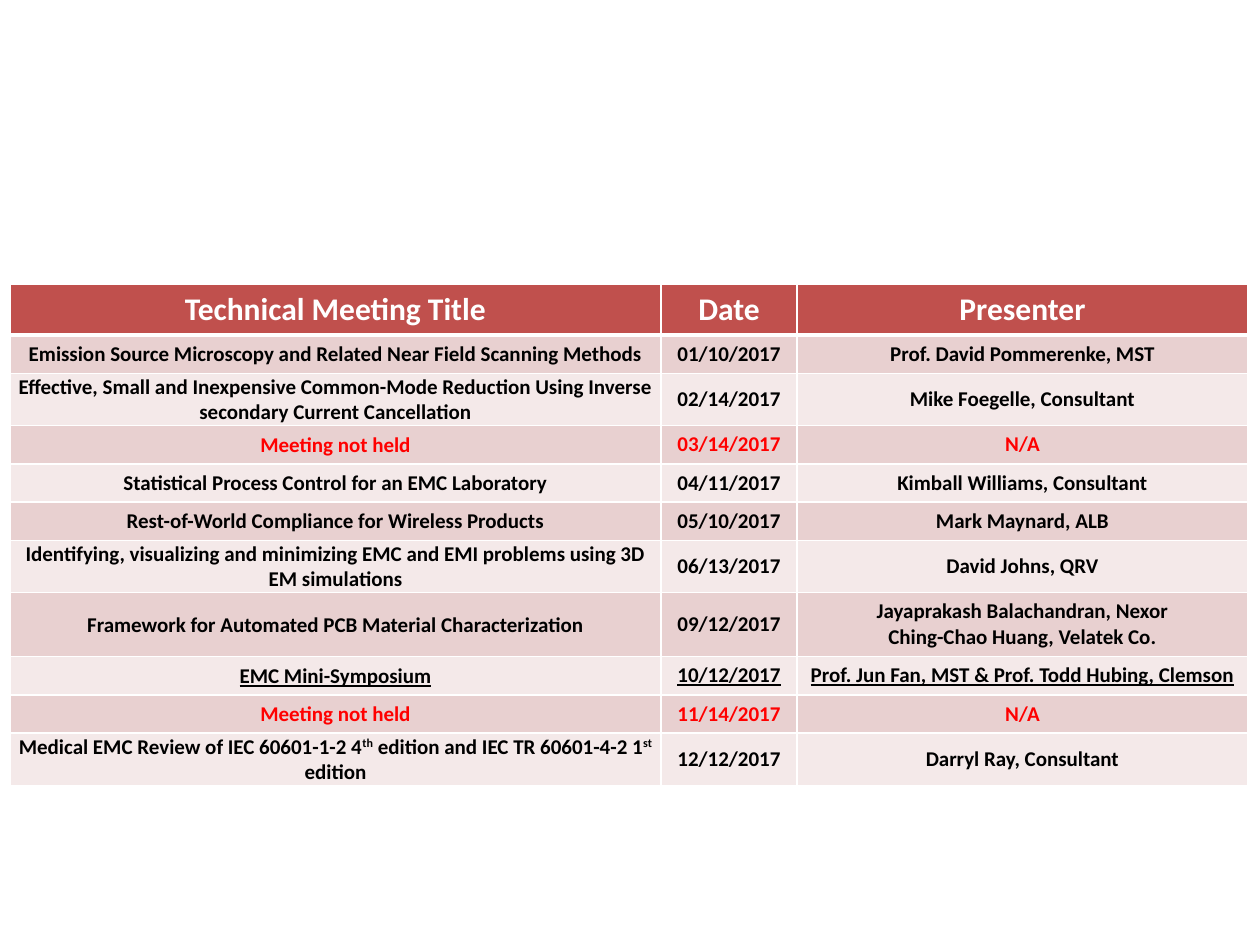
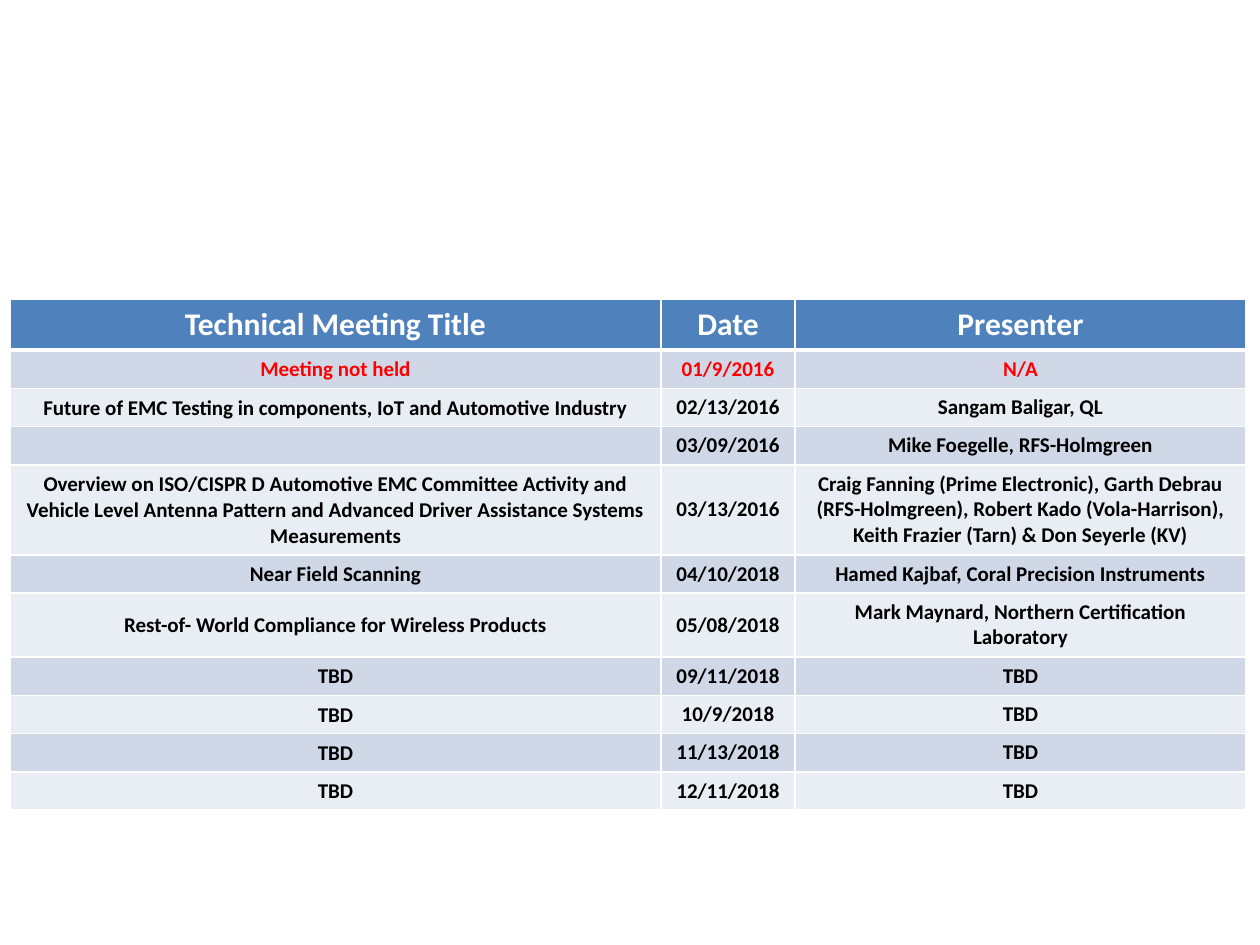
"""Build two slides of technical meeting schedules, one table for each year."""
from dataclasses import dataclass

from lxml import etree
from pptx import Presentation
from pptx import util as u
from pptx.dml.color import RGBColor
from pptx.enum import text
from pptx.oxml.ns import qn

PX = 914400 / 126
FONT = "Calibri"
WHITE, BLACK, RED = "FFFFFF", "000000", "FF0000"
HEADINGS = ("Technical Meeting Title", "Date", "Presenter")
NOT_HELD = "Meeting not held"
HEADER_H, ROW_H, TWO_LINE_TITLE_H, TWO_LINE_H, THREE_LINE_H = 51, 38, 52, 64, 90


@dataclass(frozen=True)
class Meeting:
    title: str
    date: str
    presenter: str = "TBD"
    height: int = ROW_H
    underline: bool = False


@dataclass(frozen=True)
class Schedule:
    top: int
    widths: tuple[int, int, int]
    header: str
    bands: tuple[str, str]
    meetings: tuple[Meeting, ...]


SCHEDULES = (
    Schedule(284, (651, 136, 451), "C0504D", ("E8D0D0", "F4E9E9"), (
        Meeting("Emission Source Microscopy and Related Near Field Scanning Methods",
                "01/10/2017", "Prof. David Pommerenke, MST"),
        Meeting("Effective, Small and Inexpensive Common-Mode Reduction Using Inverse "
                "secondary Current Cancellation",
                "02/14/2017", "Mike Foegelle, Consultant", TWO_LINE_TITLE_H),
        Meeting(NOT_HELD, "03/14/2017", "N/A"),
        Meeting("Statistical Process Control for an EMC Laboratory",
                "04/11/2017", "Kimball Williams, Consultant"),
        Meeting("Rest-of-World Compliance for Wireless Products",
                "05/10/2017", "Mark Maynard, ALB"),
        Meeting("Identifying, visualizing and minimizing EMC and EMI problems using 3D "
                "EM simulations",
                "06/13/2017", "David Johns, QRV", TWO_LINE_TITLE_H),
        Meeting("Framework for Automated PCB Material Characterization", "09/12/2017",
                "Jayaprakash Balachandran, Nexor\nChing-Chao Huang, Velatek Co.",
                TWO_LINE_H),
        Meeting("EMC Mini-Symposium", "10/12/2017",
                "Prof. Jun Fan, MST & Prof. Todd Hubing, Clemson", underline=True),
        Meeting(NOT_HELD, "11/14/2017", "N/A"),
        Meeting("Medical EMC Review of IEC 60601-1-2 4^th^ edition and "
                "IEC TR 60601-4-2 1^st^ edition",
                "12/12/2017", "Darryl Ray, Consultant", TWO_LINE_TITLE_H),
    )),
    Schedule(299, (651, 134, 451), "4F81BD", ("D0D8E8", "E9EDF4"), (
        Meeting(NOT_HELD, "01/9/2016", "N/A"),
        Meeting("Future of EMC Testing in components, IoT and Automotive Industry",
                "02/13/2016", "Sangam Baligar, QL"),
        Meeting("", "03/09/2016", "Mike Foegelle, RFS-Holmgreen"),
        Meeting("Overview on ISO/CISPR D Automotive EMC Committee Activity and Vehicle "
                "Level Antenna Pattern and Advanced Driver Assistance Systems Measurements",
                "03/13/2016",
                "Craig Fanning (Prime Electronic), Garth Debrau (RFS-Holmgreen), "
                "Robert Kado (Vola-Harrison), Keith Frazier (Tarn) & Don Seyerle (KV)",
                THREE_LINE_H),
        Meeting("Near Field Scanning", "04/10/2018",
                "Hamed Kajbaf, Coral Precision Instruments"),
        Meeting("Rest-of- World Compliance for Wireless Products", "05/08/2018",
                "Mark Maynard, Northern Certification Laboratory", TWO_LINE_H),
        *(Meeting("TBD", date)
          for date in ("09/11/2018", "10/9/2018", "11/13/2018", "12/11/2018")),
    )),
)


def px(n: int) -> u.Emu:
    """Turn pixels into EMU."""
    return u.Emu(round(n * PX))


def rgb(value: str) -> RGBColor:
    """Turn a hex string into a colour."""
    return RGBColor.from_string(value)


def set_borders(cell, top: int, bottom: int) -> None:
    """Draw white borders, with widths in points for the top and bottom."""
    tc_pr = cell._tc.get_or_add_tcPr()
    for side, width in (("L", 1), ("R", 1), ("T", top), ("B", bottom)):
        ln = etree.SubElement(tc_pr, qn(f"a:ln{side}"), w=str(u.Pt(width)))
        fill = etree.SubElement(ln, qn("a:solidFill"))
        etree.SubElement(fill, qn("a:srgbClr"), val=WHITE)


def write_cell(cell, content: str, size: int, color: str, underline: bool = False) -> None:
    """Write centred bold lines, raising the parts between carets."""
    cell.vertical_anchor = text.MSO_ANCHOR.MIDDLE
    tf = cell.text_frame
    for i, line in enumerate(content.split("\n")):
        p = tf.add_paragraph() if i else tf.paragraphs[0]
        p.alignment = text.PP_ALIGN.CENTER
        for j, part in enumerate(line.split("^") if line else ()):
            r = p.add_run()
            r.text = part
            r.font.name, r.font.size, r.font.bold = FONT, u.Pt(size), True
            r.font.color.rgb = rgb(color)
            if underline:
                r.font.underline = True
            if j % 2:
                r._r.get_or_add_rPr().set("baseline", "30000")
        etree.SubElement(p._p, qn("a:endParaRPr"), sz=str(size * 100))


def paint_cell(cell, fill: str, top: int = 1, bottom: int = 1) -> None:
    """Give a cell its borders and fill."""
    set_borders(cell, top, bottom)
    cell.fill.solid()
    cell.fill.fore_color.rgb = rgb(fill)


def add_schedule(s, schedule: Schedule) -> None:
    """Add the table of one schedule to a slide."""
    heights = [HEADER_H, *(m.height for m in schedule.meetings)]
    table = s.shapes.add_table(len(heights), len(HEADINGS), px(10), px(schedule.top),
                               px(sum(schedule.widths)), px(sum(heights))).table
    for column, width in zip(table.columns, schedule.widths):
        column.width = px(width)
    for row, height in zip(table.rows, heights):
        row.height = px(height)
    for col, heading in enumerate(HEADINGS):
        cell = table.cell(0, col)
        write_cell(cell, heading, 18, WHITE)
        paint_cell(cell, schedule.header, bottom=3)
    for row, m in enumerate(schedule.meetings, 1):
        color = RED if m.title == NOT_HELD else BLACK
        for col, content in enumerate((m.title, m.date, m.presenter)):
            cell = table.cell(row, col)
            write_cell(cell, content, 12, color, m.underline)
            paint_cell(cell, schedule.bands[(row - 1) % 2], top=3 if row == 1 else 1)
        title = table.cell(row, 0)
        title.margin_left = title.margin_right = title.margin_top = px(1)
        title.margin_bottom = 0


def main() -> None:
    """Build and save the presentation."""
    prs = Presentation()
    prs.slide_width, prs.slide_height = px(1260), px(945)
    for schedule in SCHEDULES:
        add_schedule(prs.slides.add_slide(prs.slide_layouts[6]), schedule)
    prs.save("out.pptx")


if __name__ == "__main__":
    main()
